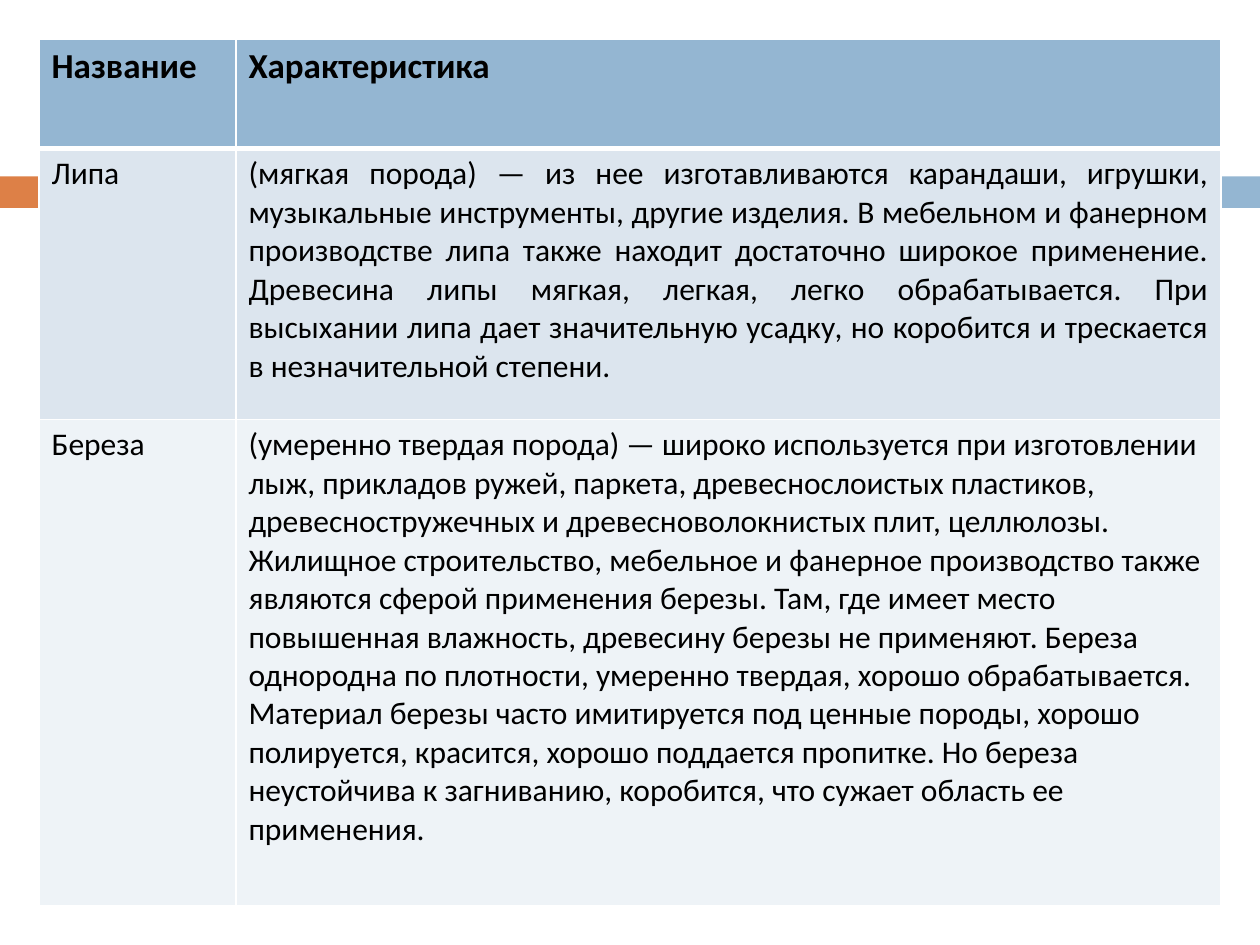
from lxml import etree
from pptx import Presentation
from pptx.dml.color import RGBColor as RGB
from pptx.enum.shapes import MSO_SHAPE as SHAPE
from pptx.enum.text import PP_ALIGN as ALIGN
from pptx.oxml.ns import qn
from pptx.util import Inches, Pt

COLORS = {
    "orange": "DD8047",
    "blue": "94B6D2",
    "band_dark": "DCE5EE",
    "band_light": "EEF3F7",
    "text": "000000",
    "border": "FFFFFF",
}
FONT = "Calibri"
COLUMN_SHARES = (1, 5)
ROW_HEIGHTS = (0.87, 2.15, 3.86)
ROW_FILLS = ("blue", "band_dark", "band_light")
ROWS = (
    ("Название", "Характеристика"),
    ("Липа",
     "(мягкая порода) — из нее изготавливаются карандаши, игрушки, "
     "музыкальные инструменты, другие изделия. В мебельном и фанерном "
     "производстве липа также находит достаточно широкое применение. "
     "Древесина липы мягкая, легкая, легко обрабатывается. При высыхании "
     "липа дает значительную усадку, но коробится и трескается в "
     "незначительной степени."),
    ("Береза",
     "(умеренно твердая порода) — широко используется при изготовлении лыж, "
     "прикладов ружей, паркета, древеснослоистых пластиков, "
     "древесностружечных и древесноволокнистых плит, целлюлозы. Жилищное "
     "строительство, мебельное и фанерное производство также являются сферой "
     "применения березы. Там, где имеет место повышенная влажность, древесину "
     "березы не применяют. Береза однородна по плотности, умеренно твердая, "
     "хорошо обрабатывается. Материал березы часто имитируется под ценные "
     "породы, хорошо полируется, красится, хорошо поддается пропитке. Но "
     "береза неустойчива к загниванию, коробится, что сужает область ее "
     "применения."),
)


def color(name):
    return RGB.from_string(COLORS[name])


def set_borders(cell, bottom):
    tc_pr = cell._tc.get_or_add_tcPr()
    widths = {"a:lnL": 1, "a:lnR": 1, "a:lnT": 1, "a:lnB": bottom}
    for i, (tag, width) in enumerate(widths.items()):
        ln = etree.Element(qn(tag), w=str(Pt(width)))
        fill = etree.SubElement(ln, qn("a:solidFill"))
        etree.SubElement(fill, qn("a:srgbClr"), val=COLORS["border"])
        tc_pr.insert(i, ln)


def add_stripe(slide, left, top, width, height):
    gap_start, gap_end = 0.058 * width, 0.065 * width
    parts = ((0, gap_start, "orange"), (gap_end, width - gap_end, "blue"))
    for offset, part_width, fill in parts:
        sp = slide.shapes.add_shape(
            SHAPE.RECTANGLE, Inches(left + offset), Inches(top),
            Inches(part_width), Inches(height))
        sp.shadow.inherit = False
        sp.fill.solid()
        sp.fill.fore_color.rgb = color(fill)
        sp.line.fill.background()


def fill_cell(cell, text, fill, header, justified):
    cell.fill.solid()
    cell.fill.fore_color.rgb = color(fill)
    set_borders(cell, 3 if header else 1)
    cell.text = text
    p = cell.text_frame.paragraphs[0]
    p.alignment = ALIGN.JUSTIFY if justified else ALIGN.LEFT
    p.font.name = FONT
    p.font.size = Pt(20 if header else 18)
    p.font.bold = header
    p.font.color.rgb = color("text")


def add_wood_table(slide, left, top, width, height):
    table = slide.shapes.add_table(
        len(ROWS), len(COLUMN_SHARES), Inches(left), Inches(top),
        Inches(width), Inches(height)).table
    table.horz_banding = False
    for column, share in zip(table.columns, COLUMN_SHARES):
        column.width = Inches(width * share / sum(COLUMN_SHARES))
    for row, row_height in zip(table.rows, ROW_HEIGHTS):
        row.height = Inches(height * row_height / sum(ROW_HEIGHTS))
    for r, texts in enumerate(ROWS):
        for c, text in enumerate(texts):
            fill_cell(table.cell(r, c), text, ROW_FILLS[r],
                      header=r == 0, justified=(r, c) == (1, 1))


def main():
    width, height = 10, 7.5
    margin = 0.31
    prs = Presentation()
    prs.slide_width, prs.slide_height = Inches(width), Inches(height)
    slide = prs.slides.add_slide(prs.slide_layouts[6])
    add_stripe(slide, 0, 1.4, width, 0.25)
    add_wood_table(slide, margin, margin, width - 2 * margin, height - 2 * margin)
    prs.save("out.pptx")


if __name__ == "__main__":
    main()
